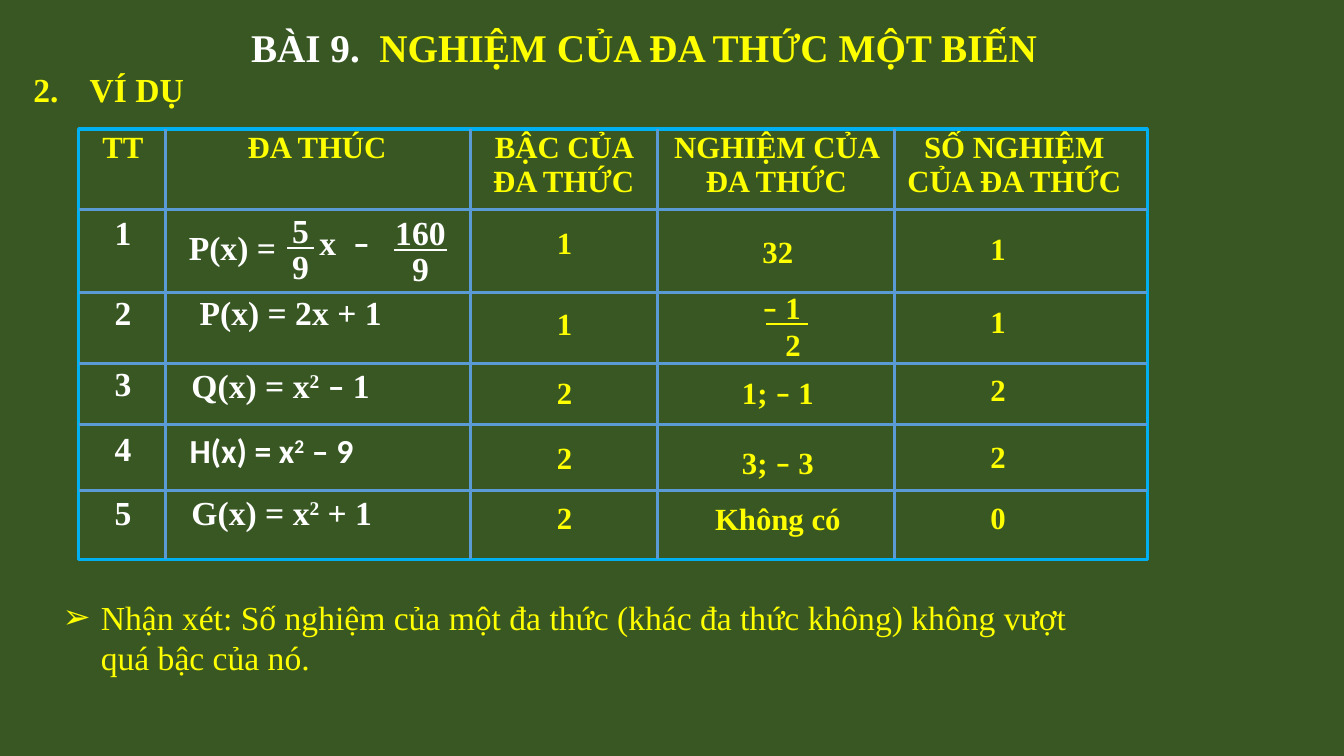
from itertools import groupby

from lxml import etree
from pptx import Presentation
from pptx.dml.color import RGBColor
from pptx.enum.shapes import MSO_CONNECTOR, MSO_SHAPE
from pptx.enum.text import MSO_ANCHOR, MSO_AUTO_SIZE, PP_ALIGN
from pptx.oxml.ns import qn
from pptx.util import Inches, Pt

GREEN = RGBColor(0x38, 0x57, 0x23)
YELLOW = RGBColor(0xFF, 0xFF, 0x00)
WHITE = RGBColor(0xFF, 0xFF, 0xFF)
CYAN = RGBColor(0x00, 0xB0, 0xF0)
BLUE = RGBColor(0x5B, 0x9B, 0xD5)
SERIF, SANS = "Times New Roman", "Calibri"
NO_STYLE = "{2D5ABB26-0587-4C30-8999-92F81FD0307C}"

LESSON = "BÀI 9.  "
TOPIC = "NGHIỆM CỦA ĐA THỨC MỘT BIẾN"
SECTION = "VÍ DỤ"
REMARK = ("Nhận xét: Số nghiệm của một đa thức (khác đa thức không) "
          "không vượt quá bậc của nó.")

HEADERS = ["TT", "ĐA THÚC", "BẬC CỦA ĐA THỨC", "NGHIỆM CỦA ĐA THỨC",
           "SỐ NGHIỆM CỦA ĐA THỨC"]
POLYNOMIALS = [("", SERIF, 0.1), ("P(x) = 2x + 1", SERIF, 0.35),
               ("Q(x) = x² – 1", SERIF, 0.27), ("H(x) = x² – 9", SANS, 0.25),
               ("G(x) = x² + 1", SERIF, 0.27)]
COL_WIDTHS = [0.82, 3.03, 1.86, 2.36, 2.36]
ROW_HEIGHTS = [0.84, 0.79, 0.71, 0.64, 0.64, 0.6]

FRAME = (0.78, 1.28, 10.6, 4.27)
ROW_LINES = [2.08, 2.9, 3.61, 4.21, 4.87]
COL_LINES = [1.64, 4.67, 6.52, 8.87]

ANSWERS = [
    (5.03, 1.14, [("1", 2.17), ("1", 2.97), ("2", 3.66), ("2", 4.3), ("2", 4.9)]),
    (6.95, 1.53, [("32", 2.26), ("1; – 1", 3.66), ("3; – 3", 4.35), ("Không có", 4.91)]),
    (9.33, 1.14, [("1", 2.23), ("1", 2.95), ("2", 3.63), ("2", 4.29), ("0", 4.9)]),
]
FRACTIONS = [
    ("5", "9", 2.58, 2.03, 2.85, 3.11, 24, WHITE, PP_ALIGN.CENTER),
    ("160", "9", 3.77, 2.05, 3.91, 4.43, 24, WHITE, PP_ALIGN.CENTER),
    ("– 1", "2", 7.24, 2.82, 7.6, 8.01, 22, YELLOW, PP_ALIGN.RIGHT),
]


def inches(*values):
    return [Inches(v) for v in values]


def style(r, size, color, bold=True, font=SERIF):
    r.font.name = font
    r.font.size = Pt(size)
    r.font.bold = bold
    r.font.color.rgb = color


def write(p, text, size, color, align=PP_ALIGN.LEFT, font=SERIF):
    p.alignment = align
    for mark, chars in groupby(text, lambda c: c if c in "–²" else ""):
        r = p.add_run()
        r.text = "2" if mark == "²" else "".join(chars)
        style(r, size, color, font=SANS if mark == "–" else font)
        if mark == "²":
            r._r.get_or_add_rPr().set("baseline", "30000")


def place(ph, box, align):
    ph.left, ph.top, ph.width, ph.height = inches(*box)
    tf = ph.text_frame
    tf.word_wrap = True
    tf.auto_size = MSO_AUTO_SIZE.NONE
    tf.vertical_anchor = MSO_ANCHOR.TOP
    p = tf.paragraphs[0]
    p.alignment = align
    p.space_before = Pt(0)
    return p


def bullet(p, indent, tag, **attrs):
    pPr = p._p.get_or_add_pPr()
    pPr.set("marL", str(Inches(indent)))
    pPr.set("indent", str(-Inches(indent)))
    color = etree.SubElement(pPr, qn("a:buClr"))
    etree.SubElement(color, qn("a:srgbClr"), val=str(YELLOW))
    etree.SubElement(pPr, qn(tag), **attrs)


def label(s, box, text, size, color, align=PP_ALIGN.LEFT, filled=False):
    sp = s.shapes.add_textbox(*inches(*box))
    if filled:
        sp.fill.solid()
        sp.fill.fore_color.rgb = GREEN
    tf = sp.text_frame
    tf.word_wrap = True
    write(tf.paragraphs[0], text, size, color, align)
    return tf


def line(s, x1, y1, x2, y2, color, width):
    c = s.shapes.add_connector(MSO_CONNECTOR.STRAIGHT, *inches(x1, y1, x2, y2))
    c.line.color.rgb = color
    c.line.width = Pt(width)
    etree.SubElement(c._element.spPr, qn("a:effectLst"))


def add_headings(s):
    title, section, remark = s.placeholders
    p = place(title, (2.39, 0.18, 8.22, 0.57), PP_ALIGN.LEFT)
    for text, color in [(LESSON, WHITE), (TOPIC, YELLOW)]:
        r = p.add_run()
        r.text = text
        style(r, 28, color)
    p = place(section, (0.23, 0.63, 1.9, 0.58), PP_ALIGN.LEFT)
    p.text = SECTION
    style(p.runs[0], 24, YELLOW)
    bullet(p, 0.56, "a:buAutoNum", type="arabicPeriod", startAt="2")
    p = place(remark, (0.52, 5.87, 10.69, 0.91), PP_ALIGN.LEFT)
    p.text = REMARK
    style(p.runs[0], 24, YELLOW, bold=False)
    bullet(p, 0.38, "a:buChar", char="➢")


def add_polynomial_table(s):
    frame = s.shapes.add_table(len(ROW_HEIGHTS), len(COL_WIDTHS), *inches(
        0.81, 1.25, sum(COL_WIDTHS), sum(ROW_HEIGHTS)))
    table = frame.table
    table.first_row = table.horz_banding = False
    table._tbl.tblPr.find(qn("a:tableStyleId")).text = NO_STYLE
    for col, width in zip(table.columns, COL_WIDTHS):
        col.width = Inches(width)
    for row, height in zip(table.rows, ROW_HEIGHTS):
        row.height = Inches(height)
    for cell in table.iter_cells():
        cell.fill.solid()
        cell.fill.fore_color.rgb = GREEN
    for j, text in enumerate(HEADERS):
        write(table.cell(0, j).text_frame.paragraphs[0], text, 22, YELLOW, PP_ALIGN.CENTER)
    for i, (text, font, margin) in enumerate(POLYNOMIALS, 1):
        write(table.cell(i, 0).text_frame.paragraphs[0], str(i), 24, WHITE, PP_ALIGN.CENTER)
        cell = table.cell(i, 1)
        cell.margin_left = Inches(margin)
        write(cell.text_frame.paragraphs[0], text, 24, WHITE, font=font)


def add_grid(s):
    left, top, width, height = FRAME
    border = s.shapes.add_shape(MSO_SHAPE.RECTANGLE, *inches(*FRAME))
    border.shadow.inherit = False
    border.fill.background()
    border.line.color.rgb = CYAN
    border.line.width = Pt(2.25)
    for y in ROW_LINES:
        line(s, left, y, left + width, y, BLUE, 2.25)
    for x in COL_LINES:
        line(s, x, top, x, top + height, BLUE, 2.25)


def add_answers(s):
    for left, width, values in ANSWERS:
        for text, top in values:
            label(s, (left, top, width, 0.5), text, 22, YELLOW, PP_ALIGN.CENTER, filled=True)


def add_fractions(s):
    tf = label(s, (1.72, 2.2, 1.17, 0.51), "P(x) =", 24, WHITE, PP_ALIGN.CENTER, filled=True)
    tf.vertical_anchor = MSO_ANCHOR.MIDDLE
    label(s, (3.07, 2.15, 0.8, 0.5), "x  –", 24, WHITE)
    for top_text, low_text, left, top, x1, x2, size, color, align in FRACTIONS:
        label(s, (left, top, 0.8, 0.5), top_text, size, color, align)
        label(s, (left, top + 0.36, 0.8, 0.5), low_text, size, color, align)
        bar = top + size * 0.018
        line(s, x1, bar, x2, bar, color, 1)


def main():
    prs = Presentation()
    prs.slide_width, prs.slide_height = inches(13.33, 7.5)
    s = prs.slides.add_slide(prs.slide_layouts[3])
    s.background.fill.solid()
    s.background.fill.fore_color.rgb = GREEN
    add_headings(s)
    add_polynomial_table(s)
    add_grid(s)
    add_answers(s)
    add_fractions(s)
    prs.save("out.pptx")


if __name__ == "__main__":
    main()
